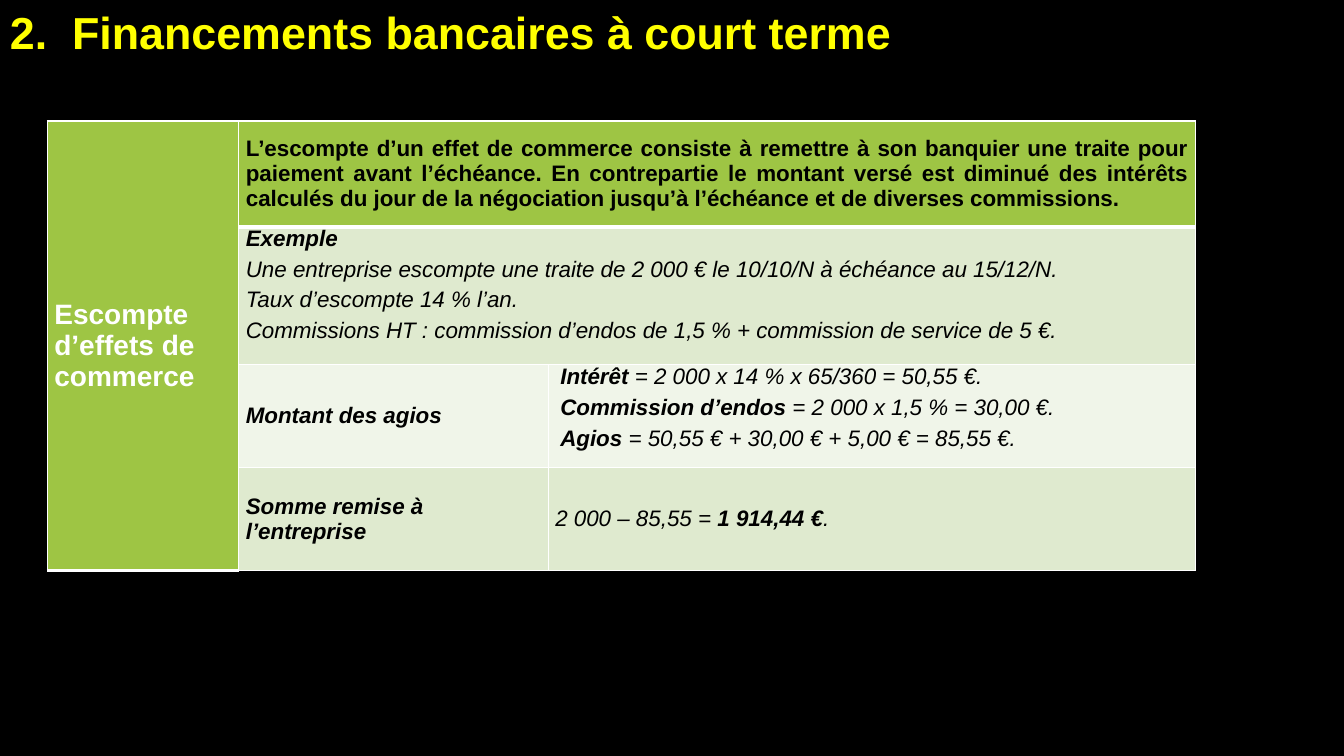
from lxml import etree
from pptx import Presentation
from pptx.dml.color import RGBColor
from pptx.enum import text
from pptx.oxml import ns
from pptx.util import Pt

COLORS = {
    "back": "000000", "title": "FFFF00", "head": "9EC544", "band": "DFEACF",
    "pale": "F0F5E9", "light": "FFFFFF", "dark": "000000",
}
FONT = "Arial"
COLS = (136.8, 221.04, 462.24)
ROWS = (75.6, 98.64, 73.44, 73.44)

# Each cell: row, column, row span, column span, paragraphs, options.
# Asterisks enclose the bold parts of a paragraph.
CELLS = (
    (0, 0, 4, 1, ["*Escompte d’effets de commerce*"],
     dict(fill="head", ink="light", size=20, gap=3, under=3)),
    (0, 1, 1, 2, ["*L’escompte d’un effet de commerce consiste à remettre à son "
                  "banquier une traite pour paiement avant l’échéance. En "
                  "contrepartie le montant versé est diminué des intérêts calculés "
                  "du jour de la négociation jusqu’à l’échéance et de diverses "
                  "commissions. *"],
     dict(fill="head", gap=3, under=3, align=text.PP_ALIGN.JUSTIFY)),
    (1, 1, 1, 2, ["*Exemple*",
                  "Une entreprise escompte une traite de 2 000 € le 10/10/N à "
                  "échéance au 15/12/N.",
                  "Taux d’escompte 14 % l’an.",
                  "Commissions HT : commission d’endos de 1,5 % + commission de "
                  "service de 5 €."],
     dict(fill="band", italic=True, middle=False)),
    (2, 1, 1, 1, ["*Montant des agios*"], dict(fill="pale", italic=True)),
    (2, 2, 1, 1, ["*Intérêt* = 2 000 x 14 % x 65/360 = 50,55 €.",
                  "*Commission d’endos* = 2 000 x 1,5 % = 30,00 €.",
                  "*Agios* = 50,55 € + 30,00 € + 5,00 € = 85,55 €."],
     dict(fill="pale", italic=True, middle=False, indent=3.6)),
    (3, 1, 1, 1, ["*Somme remise à l’entreprise*"], dict(fill="band", italic=True)),
    (3, 2, 1, 1, ["2 000 – 85,55 = *1 914,44 €*."], dict(fill="band", italic=True)),
)


def rgb(name):
    return RGBColor.from_string(COLORS[name])


def write(para, words, size, ink, italic=False):
    """Fill a paragraph, with the parts between asterisks in bold."""
    for n, part in enumerate(words.split("*")):
        if part:
            run = para.add_run()
            run.text = part
            font = run.font
            font.name, font.size = FONT, Pt(size)
            font.bold, font.italic = n % 2 == 1, italic
            font.color.rgb = rgb(ink)


def space(para, gap):
    para.space_before = para.space_after = Pt(gap)


def border(cell, under):
    """Draw white cell edges, the bottom one as wide as given."""
    props = cell._tc.get_or_add_tcPr()
    for side, width in (("L", 1), ("R", 1), ("T", 1), ("B", under)):
        line = etree.SubElement(props, ns.qn(f"a:ln{side}"), w=str(Pt(width)))
        fill = etree.SubElement(line, ns.qn("a:solidFill"))
        etree.SubElement(fill, ns.qn("a:srgbClr"), val=COLORS["light"])


def paint(cell, fill, under):
    border(cell, under)
    cell.fill.solid()
    cell.fill.fore_color.rgb = rgb(fill)


def fill_cell(cell, paras, ink="dark", size=16, gap=2, align=None,
              italic=False, middle=True, indent=0):
    cell.margin_left = cell.margin_right = Pt(5)
    cell.margin_top = cell.margin_bottom = 0
    anchor = text.MSO_ANCHOR
    cell.vertical_anchor = anchor.MIDDLE if middle else anchor.TOP
    frame = cell.text_frame
    for n, words in enumerate(paras):
        para = frame.add_paragraph() if n else frame.paragraphs[0]
        space(para, gap)
        if align is not None:
            para.alignment = align
        if indent:
            props = para._p.get_or_add_pPr()
            props.set("marL", str(Pt(indent)))
            props.set("indent", "0")
        write(para, words, size, ink, italic)


def add_title(slide, left, top, width, height):
    frame = slide.shapes.add_textbox(left, top, width, height).text_frame
    frame.word_wrap = True
    frame.auto_size = text.MSO_AUTO_SIZE.SHAPE_TO_FIT_TEXT
    para = frame.paragraphs[0]
    space(para, 3)
    write(para, "*2.  Financements bancaires à court terme*", 32, "title")


def add_grid(slide, left, top):
    table = slide.shapes.add_table(len(ROWS), len(COLS), left, top,
                                   Pt(sum(COLS)), Pt(sum(ROWS))).table
    table.first_row = table.horz_banding = False
    for col, width in zip(table.columns, COLS):
        col.width = Pt(width)
    for row, height in zip(table.rows, ROWS):
        row.height = Pt(height)
    for row, col, down, across, paras, opts in CELLS:
        look = dict(opts)
        fill, under = look.pop("fill"), look.pop("under", 1)
        for r in range(row, row + down):
            for c in range(col, col + across):
                paint(table.cell(r, c), fill, under)
        cell = table.cell(row, col)
        if down * across > 1:
            cell.merge(table.cell(row + down - 1, col + across - 1))
        fill_cell(cell, paras, **look)


def main():
    deck = Presentation()
    deck.slide_width, deck.slide_height = Pt(960), Pt(540)
    slide = deck.slides.add_slide(deck.slide_layouts[6])
    back = slide.background.fill
    back.solid()
    back.fore_color.rgb = rgb("back")
    add_title(slide, 0, 0, Pt(991.44), Pt(46))
    add_grid(slide, Pt(33.84), Pt(86.4))
    deck.save("out.pptx")


if __name__ == "__main__":
    main()
